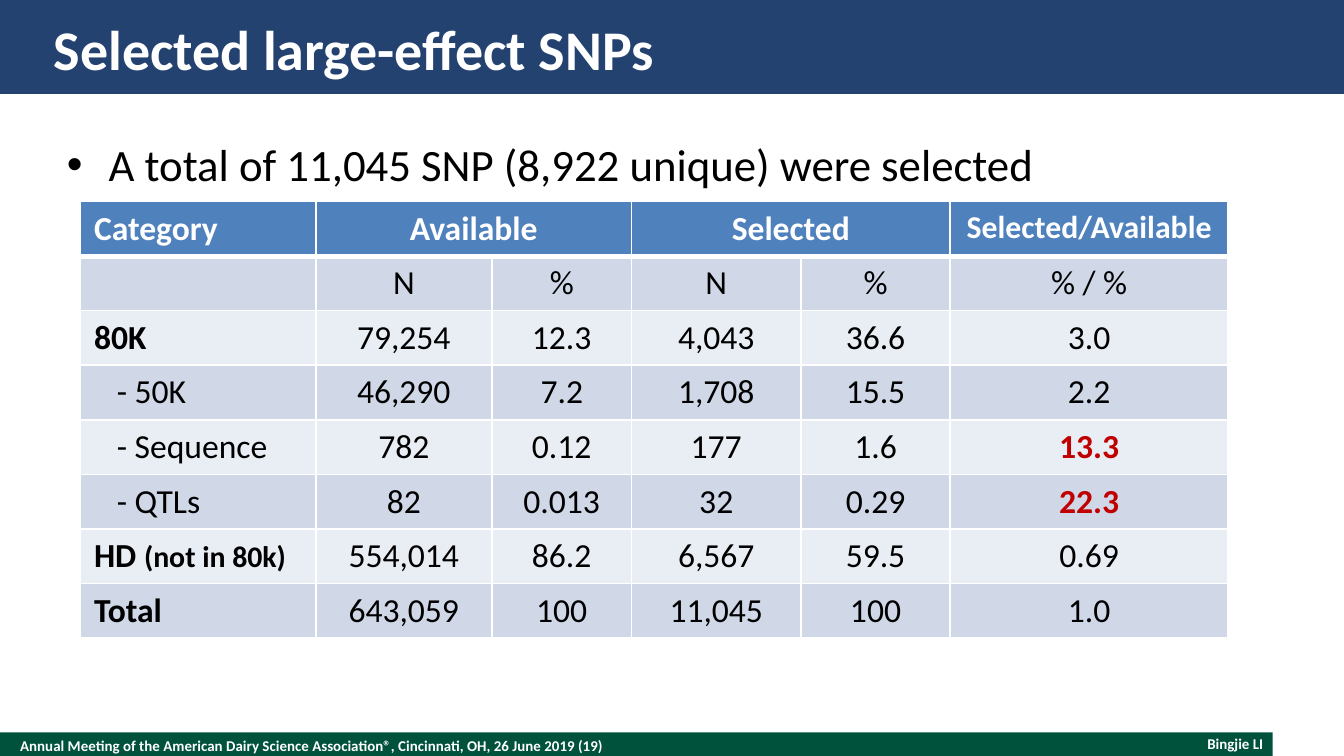
from lxml import etree
from pptx import Presentation
from pptx.dml.color import RGBColor
from pptx.enum import shapes, text
from pptx.oxml import ns
from pptx import util as u

COLORS = {
    "white": "FFFFFF", "black": "000000", "navy": "244270", "green": "00523C",
    "header": "4F81BD", "dark_band": "D0D8E8", "light_band": "E9EDF4", "red": "C00000",
}
LEFT, CENTER, RIGHT = text.PP_ALIGN.LEFT, text.PP_ALIGN.CENTER, text.PP_ALIGN.RIGHT

SLIDE_WIDTH = 10
SLIDE_HEIGHT = SLIDE_WIDTH * 9 / 16
COLUMN_WIDTHS = [1.75, 1.31, 1.04, 1.26, 1.11, 2.07]
TABLE_HEIGHT = 3.25
SUB_ROW_MARGIN = 0.27
ROWS = [
    ["Category", "Available", "", "Selected", "", "Selected/Available"],
    ["", "N", "%", "N", "%", "% / %"],
    ["80K", "79,254", "12.3", "4,043", "36.6", "3.0"],
    ["- 50K", "46,290", "7.2", "1,708", "15.5", "2.2"],
    ["- Sequence", "782", "0.12", "177", "1.6", "13.3"],
    ["- QTLs", "82", "0.013", "32", "0.29", "22.3"],
    ["HD ", "554,014", "86.2", "6,567", "59.5", "0.69"],
    ["Total", "643,059", "100", "11,045", "100", "1.0"],
]
HIGHLIGHTS = {"13.3", "22.3"}


def rgb(name):
    return RGBColor.from_string(COLORS[name])


def add_run(paragraph, content, size=18, color="black", bold=False, align=LEFT):
    paragraph.alignment = align
    run = paragraph.add_run()
    run.text = content
    font = run.font
    font.name, font.size, font.bold = "Calibri", u.Pt(size), bold
    font.color.rgb = rgb(color)


def add_bullet(paragraph, indent):
    properties = paragraph._p.get_or_add_pPr()
    properties.set("marL", str(u.Inches(indent)))
    properties.set("indent", str(-u.Inches(indent)))
    etree.SubElement(properties, ns.qn("a:buFont"), typeface="Arial")
    etree.SubElement(properties, ns.qn("a:buChar"), char="•")


def set_borders(cell, top, bottom):
    properties = cell._tc.get_or_add_tcPr()
    for side, width in (("L", 1), ("R", 1), ("T", top), ("B", bottom)):
        line = etree.SubElement(properties, ns.qn(f"a:ln{side}"), w=str(u.Pt(width)))
        fill = etree.SubElement(line, ns.qn("a:solidFill"))
        etree.SubElement(fill, ns.qn("a:srgbClr"), val=COLORS["white"])


class SlideBuilder:
    def __init__(self, presentation):
        self.slide = presentation.slides.add_slide(presentation.slide_layouts[6])

    def bar(self, left, top, width, height, color):
        shape = self.slide.shapes.add_shape(
            shapes.MSO_SHAPE.RECTANGLE, *map(u.Inches, (left, top, width, height)))
        shape.shadow.inherit = False
        shape.fill.solid()
        shape.fill.fore_color.rgb = rgb(color)
        shape.line.fill.background()

    def label(self, content, left, top, width, height, bullet_indent=None, **style):
        box = self.slide.shapes.add_textbox(*map(u.Inches, (left, top, width, height)))
        frame = box.text_frame
        frame.word_wrap = True
        paragraph = frame.paragraphs[0]
        if bullet_indent:
            add_bullet(paragraph, bullet_indent)
        else:
            frame.margin_left = frame.margin_right = 0
            frame.margin_top = frame.margin_bottom = 0
            frame.vertical_anchor = text.MSO_ANCHOR.MIDDLE
        add_run(paragraph, content, **style)

    def cell(self, cell, content, row, column):
        header = row == 0
        set_borders(cell, top=3 if row == 1 else 1, bottom=3 if header else 1)
        cell.fill.solid()
        band = "dark_band" if row % 2 else "light_band"
        cell.fill.fore_color.rgb = rgb("header" if header else band)
        if not content:
            return
        sub_row = content.startswith("- ")
        if sub_row:
            cell.margin_left = u.Inches(SUB_ROW_MARGIN)
        highlight = content in HIGHLIGHTS
        color = "white" if header else "red" if highlight else "black"
        paragraph = cell.text_frame.paragraphs[0]
        add_run(paragraph, content, color=color,
                size=17 if content == "Selected/Available" else 18,
                bold=header or highlight or (column == 0 and not sub_row),
                align=CENTER if column else LEFT)
        if content == "HD ":
            add_run(paragraph, "(not in 80k)", size=16, bold=True)

    def table(self, left, top):
        table = self.slide.shapes.add_table(
            len(ROWS), len(COLUMN_WIDTHS), u.Inches(left), u.Inches(top),
            u.Inches(sum(COLUMN_WIDTHS)), u.Inches(TABLE_HEIGHT)).table
        for column, width in zip(table.columns, COLUMN_WIDTHS):
            column.width = u.Inches(width)
        for row, values in enumerate(ROWS):
            for column, content in enumerate(values):
                self.cell(table.cell(row, column), content, row, column)
        for column in (1, 3):
            table.cell(0, column).merge(table.cell(0, column + 1))


def main():
    presentation = Presentation()
    presentation.slide_width = u.Inches(SLIDE_WIDTH)
    presentation.slide_height = u.Inches(SLIDE_HEIGHT)
    builder = SlideBuilder(presentation)
    builder.bar(0, 5.45, 9.47, 0.2, "green")
    builder.bar(0, 0, SLIDE_WIDTH, 0.7, "navy")
    footer = {"size": 8, "color": "white", "bold": True}
    builder.label("Annual Meeting of the American Dairy Science Association®, "
                  "Cincinnati, OH, 26 June 2019 (19)", 0.15, 5.45, 6.5, 0.2, **footer)
    builder.label("Bingjie LI", 7.2, 5.47, 2.2, 0.13, align=RIGHT, **footer)
    builder.label("Selected large-effect SNPs", 0.4, 0.1, 9.2, 0.52,
                  size=30, color="white", bold=True)
    builder.table(0.6, 1.5)
    builder.label("A total of 11,045 SNP (8,922 unique) were selected",
                  0.4, 0.97, 8.74, 0.5, bullet_indent=0.31, size=24)
    presentation.save("out.pptx")


if __name__ == "__main__":
    main()
